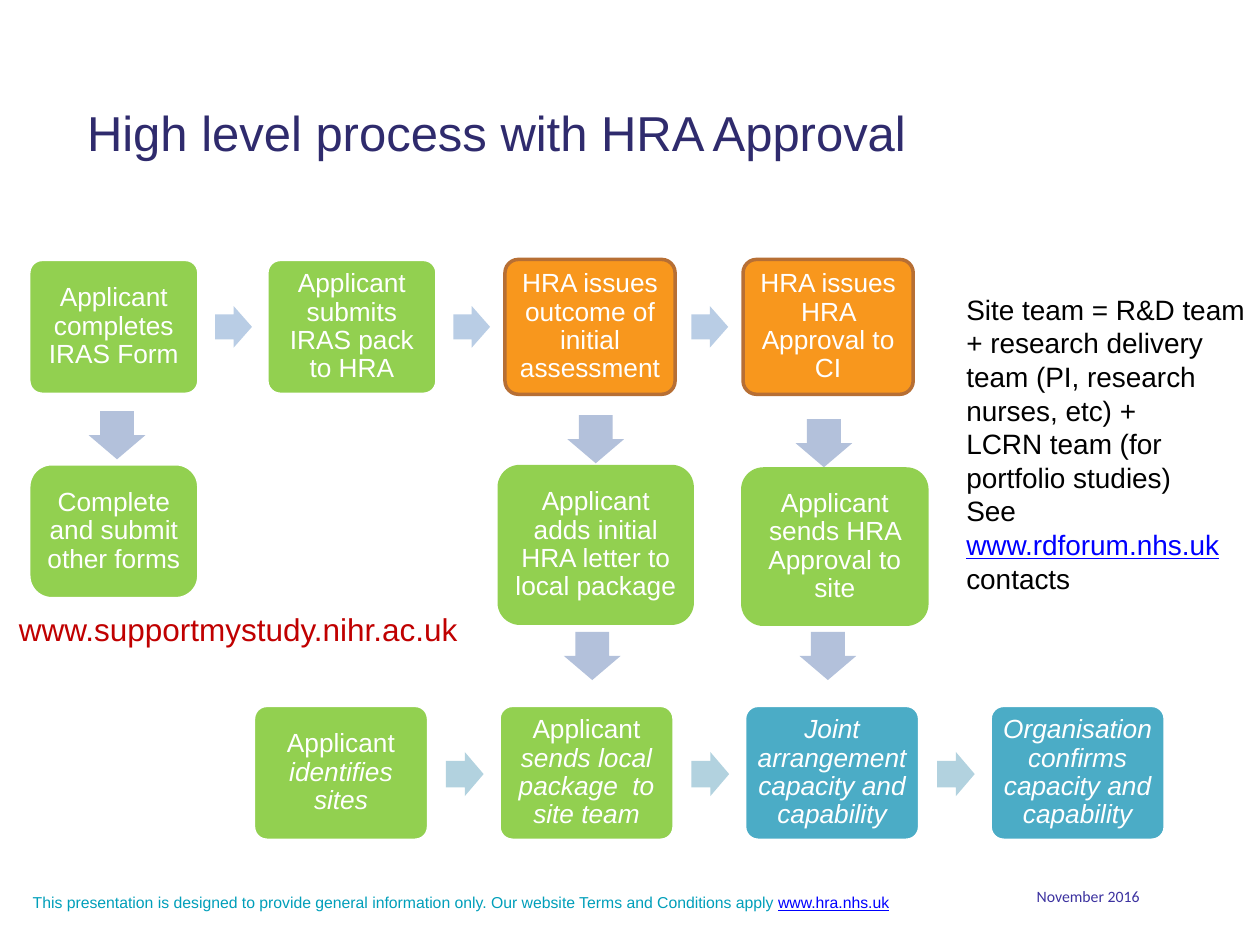
from pptx import Presentation
from pptx.dml.color import RGBColor
from pptx.enum.shapes import MSO_SHAPE
from pptx.enum.text import MSO_ANCHOR, MSO_AUTO_SIZE, PP_ALIGN
from pptx.util import Cm, Pt

ROUND = MSO_SHAPE.ROUNDED_RECTANGLE
RIGHT = MSO_SHAPE.RIGHT_ARROW
DOWN = MSO_SHAPE.DOWN_ARROW
MIDDLE = MSO_ANCHOR.MIDDLE
TOP = MSO_ANCHOR.TOP
FIXED = MSO_AUTO_SIZE.NONE
LEFT = PP_ALIGN.LEFT
CENTER = PP_ALIGN.CENTER
color = RGBColor.from_string

GREEN, ORANGE, TEAL = "92D050", "F8971D", "4BACC6"
WHITE, BROWN, BLUE, BLACK = "FFFFFF", "B76F34", "0000FF", "000000"


def write(para, runs, size, align=LEFT, face="Arial"):
    para.alignment = align
    for text, tone, style in runs:
        run = para.add_run()
        run.text = text
        font = run.font
        font.name = face
        font.size = Pt(size)
        font.color.rgb = color(tone)
        font.italic = style == "italic"
        font.underline = style == "line"


def draw(kind, area, fill, edge=None, adjust=(0.6, 0.5)):
    shape = slide.shapes.add_shape(kind, *map(Cm, area))
    shape.shadow.inherit = False
    shape.fill.solid()
    shape.fill.fore_color.rgb = color(fill)
    if edge:
        shape.line.color.rgb = color(edge)
        shape.line.width = Pt(2)
    else:
        shape.line.fill.background()
    for i, value in enumerate(adjust):
        shape.adjustments[i] = value
    return shape


deck = Presentation()
deck.slide_width, deck.slide_height = Cm(25.4), Cm(19.05)
slide = deck.slides.add_slide(deck.slide_layouts[5])

title = slide.shapes.title
title.left, title.top, title.width, title.height = map(Cm, (1.5, 1.93, 17.5, 1.45))
title.text_frame.auto_size = FIXED
title.text_frame.word_wrap = False
title.text_frame.vertical_anchor = TOP
write(title.text_frame.paragraphs[0],
      [("High level process with HRA Approval", "2F2B6D", "")], 28)

steps = [
    ("Applicant completes IRAS Form", GREEN, WHITE),
    ("Applicant submits IRAS pack to HRA", GREEN, WHITE),
    ("HRA issues outcome of initial assessment", ORANGE, BROWN),
    ("HRA issues HRA Approval to CI", ORANGE, BROWN),
]
sites = [
    ("Applicant", " identifies sites", GREEN),
    ("Applicant", " sends local package  to site team", GREEN),
    ("", "Joint arrangement capacity and capability", TEAL),
    ("", "Organisation confirms capacity and capability", TEAL),
]

cards = []
for i, (text, fill, edge) in enumerate(steps):
    x = 0.58 + 4.8 * i
    cards.append(((x, 5.23, 3.43, 2.72), fill, edge, 0.1, 0.15, text, ""))
    if i < len(steps) - 1:
        draw(RIGHT, (x + 3.76, 6.17, 0.74, 0.84), "B9CDE5")

for i, (plain, slant, fill) in enumerate(sites):
    x = 5.11 + 4.95 * i
    cards.append(((x, 14.22, 3.53, 2.72), fill, WHITE, 0.1, 0.15, plain, slant))
    if i < len(sites) - 1:
        draw(RIGHT, (x + 3.88, 15.16, 0.76, 0.89), "B2D2DF")

cards += [
    ((0.58, 9.35, 3.43, 2.72), GREEN, WHITE, 0.17, 0.22,
     "Complete and submit other forms", ""),
    ((10.03, 9.37, 3.96, 3.23), GREEN, None, 0.14, 0.18,
     "Applicant adds initial HRA letter to local package", ""),
    ((14.94, 9.42, 3.78, 3.2), GREEN, None, 0.14, 0.18,
     "Applicant sends HRA Approval to site", ""),
]
for area, fill, edge, bend, pad, plain, slant in cards:
    frame = draw(ROUND, area, fill, edge, (bend,)).text_frame
    frame.word_wrap = True
    frame.vertical_anchor = MIDDLE
    frame.margin_left = frame.margin_right = Cm(pad)
    frame.margin_top = frame.margin_bottom = Cm(pad)
    para = frame.paragraphs[0]
    para.line_spacing = 0.9
    runs = [(plain, WHITE, ""), (slant, WHITE, "italic")]
    write(para, [run for run in runs if run[0]], 15, CENTER)

for x, y in [(1.79, 8.29), (11.44, 8.37), (16.04, 8.45), (11.37, 12.74), (16.12, 12.74)]:
    draw(DOWN, (x, y, 1.14, 0.97), "B3C1DB")

notes = [
    ((0.41, 17.88, 22, 0.64), 9, LEFT, "Arial", [
        [("This presentation is designed to provide general information only. "
          "Our website Terms and Conditions apply ", "009FBA", ""),
         ("www.hra.nhs.uk", BLUE, "line")]]),
    ((19.23, 5.77, 6.2, 6.4), 16, LEFT, "Arial", [
        [("Site team = R&D team + research delivery team "
          "(PI, research nurses, etc) +", BLACK, "")],
        [("LCRN team (for portfolio studies)", BLACK, "")],
        [("See ", BLACK, ""), ("www.rdforum.nhs.uk", BLUE, "line"),
         (" contacts", BLACK, "")]]),
    ((0.03, 12.17, 9.55, 1.02), 18, CENTER, "Arial", [
        [("www.supportmystudy.nihr.ac.uk", "C00000", "")]]),
    ((19.38, 17.75, 5.11, 1.02), 9, CENTER, "Calibri", [
        [("November 2016", "3C32A0", "")]]),
]
for area, size, align, face, lines in notes:
    frame = slide.shapes.add_textbox(*map(Cm, area)).text_frame
    frame.word_wrap = True
    for i, runs in enumerate(lines):
        para = frame.add_paragraph() if i else frame.paragraphs[0]
        write(para, runs, size, align, face)

deck.save("out.pptx")
